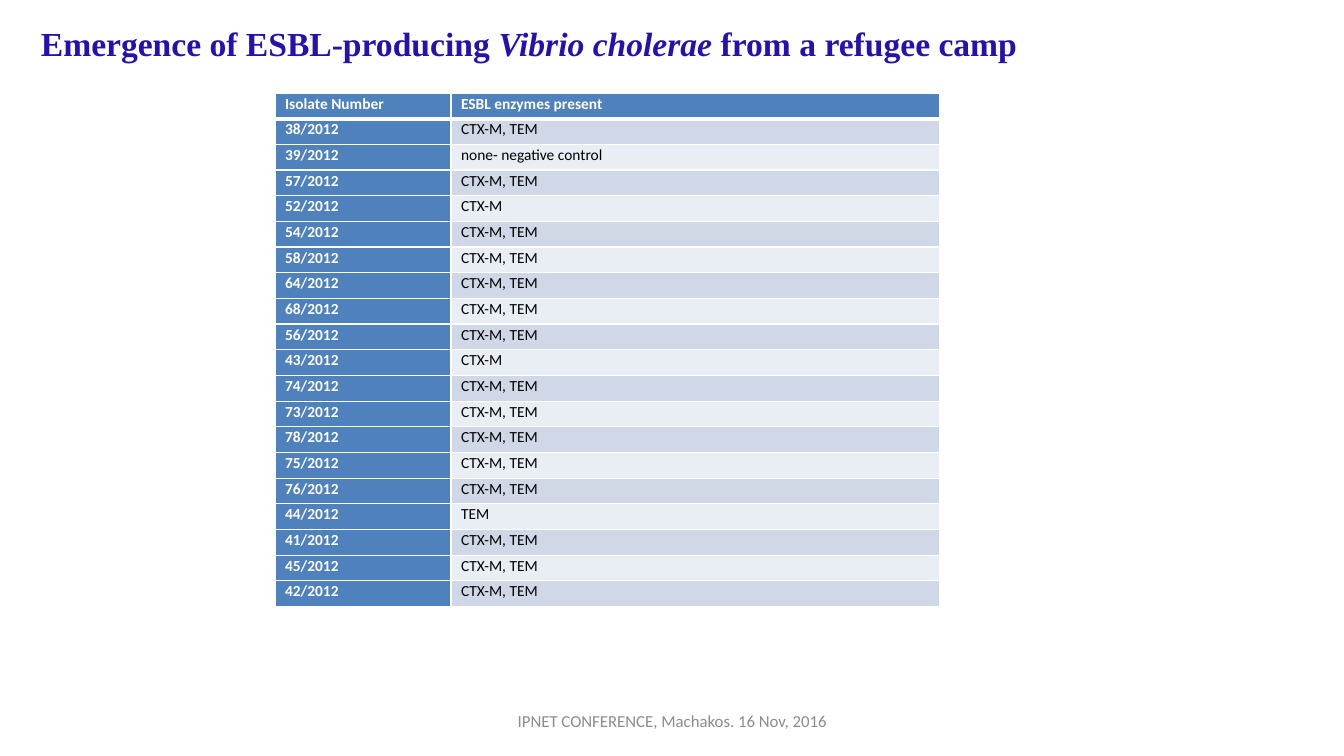
from dataclasses import dataclass

from lxml import etree
from pptx import Presentation, util as u
from pptx.dml.color import RGBColor
from pptx.enum import text
from pptx.oxml import ns

# Content
TITLE = [
    ("Emergence of ESBL-producing ", False),
    ("Vibrio cholerae ", True),
    ("from a refugee camp", False),
]
HEADER = ("Isolate Number", "ESBL enzymes present")
BOTH = "CTX-M, TEM"
ISOLATES = [
    ("38/2012", BOTH),
    ("39/2012", "none- negative control"),
    ("57/2012", BOTH),
    ("52/2012", "CTX-M"),
    ("54/2012", BOTH),
    ("58/2012", BOTH),
    ("64/2012", BOTH),
    ("68/2012", BOTH),
    ("56/2012", BOTH),
    ("43/2012", "CTX-M"),
    ("74/2012", BOTH),
    ("73/2012", BOTH),
    ("78/2012", BOTH),
    ("75/2012", BOTH),
    ("76/2012", BOTH),
    ("44/2012", "TEM"),
    ("41/2012", BOTH),
    ("45/2012", BOTH),
    ("42/2012", BOTH),
]
FOOTER = [("IPNET CONFERENCE, Machakos. 16 Nov, 2016", False)]

# Layout in px: left, top, width, height
SLIDE = (1344, 756)
TITLE_BOX = (31, 18, 1006, 50)
TABLE_BOX = (275, 93, 665, 514)
FOOTER_BOX = (460, 701, 425, 40)
COLUMNS = (176, 489)


@dataclass(frozen=True)
class Theme:
    title_font: str = "Times New Roman"
    body_font: str = "Calibri"
    title_size: int = 24
    table_size: int = 11
    footer_size: int = 12
    title: str = "2512AE"
    footer: str = "8C8C8C"
    accent: str = "4F81BD"
    light: str = "FFFFFF"
    dark: str = "000000"
    bands: tuple = ("D0D8E8", "E9EDF4")


THEME = Theme()


def px(length):
    return u.Emu(round(length * 914400 / 100.8))


def add_span(para, words, font, size, color, bold=False, italic=False):
    span = para.add_run()
    span.text = words
    span.font.name = font
    span.font.size = u.Pt(size)
    span.font.bold = bold
    span.font.italic = italic
    span.font.color.rgb = RGBColor.from_string(color)


def add_line_of_text(page, frame, spans, font, size, color, bold=False):
    box = page.shapes.add_textbox(*map(px, frame))
    para = box.text_frame.paragraphs[0]
    for words, italic in spans:
        add_span(para, words, font, size, color, bold, italic)
    return box.text_frame


def add_borders(cell, widths):
    props = cell._tc.get_or_add_tcPr()
    for side, width in widths.items():
        line = etree.SubElement(props, ns.qn(f"a:ln{side}"), w=str(u.Pt(width)))
        fill = etree.SubElement(line, ns.qn("a:solidFill"))
        etree.SubElement(fill, ns.qn("a:srgbClr"), val=THEME.light)


def fill_cell(cell, words, row, column):
    strong = row == 0 or column == 0
    add_borders(cell, {"L": 1, "R": 1, "T": 3 if row == 1 else 1, "B": 3 if row == 0 else 1})
    cell.fill.solid()
    color = THEME.accent if strong else THEME.bands[(row - 1) % 2]
    cell.fill.fore_color.rgb = RGBColor.from_string(color)
    cell.margin_left = cell.margin_right = u.Inches(0.1)
    cell.margin_top = cell.margin_bottom = 0
    para = cell.text_frame.paragraphs[0]
    para.line_spacing = 1.07
    add_span(para, words, THEME.body_font, THEME.table_size,
             THEME.light if strong else THEME.dark, bold=strong)


def add_isolate_table(page):
    rows = [HEADER, *ISOLATES]
    table = page.shapes.add_table(len(rows), len(HEADER), *map(px, TABLE_BOX)).table
    for column, width in zip(table.columns, COLUMNS):
        column.width = px(width)
    for r, values in enumerate(rows):
        table.rows[r].height = px(TABLE_BOX[3] / len(rows))
        for c, words in enumerate(values):
            fill_cell(table.cell(r, c), words, r, c)


def main():
    deck = Presentation()
    deck.slide_width, deck.slide_height = map(px, SLIDE)
    page = deck.slides.add_slide(deck.slide_layouts[6])

    # Isolates and their enzymes
    add_isolate_table(page)

    # Title
    title = add_line_of_text(page, TITLE_BOX, TITLE, THEME.title_font,
                             THEME.title_size, THEME.title, bold=True)
    title.word_wrap = False
    title.auto_size = text.MSO_AUTO_SIZE.SHAPE_TO_FIT_TEXT

    # Footer
    footer = add_line_of_text(page, FOOTER_BOX, FOOTER, THEME.body_font,
                              THEME.footer_size, THEME.footer)
    footer.word_wrap = True
    footer.vertical_anchor = text.MSO_ANCHOR.MIDDLE
    footer.paragraphs[0].alignment = text.PP_ALIGN.CENTER

    deck.save("out.pptx")


if __name__ == "__main__":
    main()
